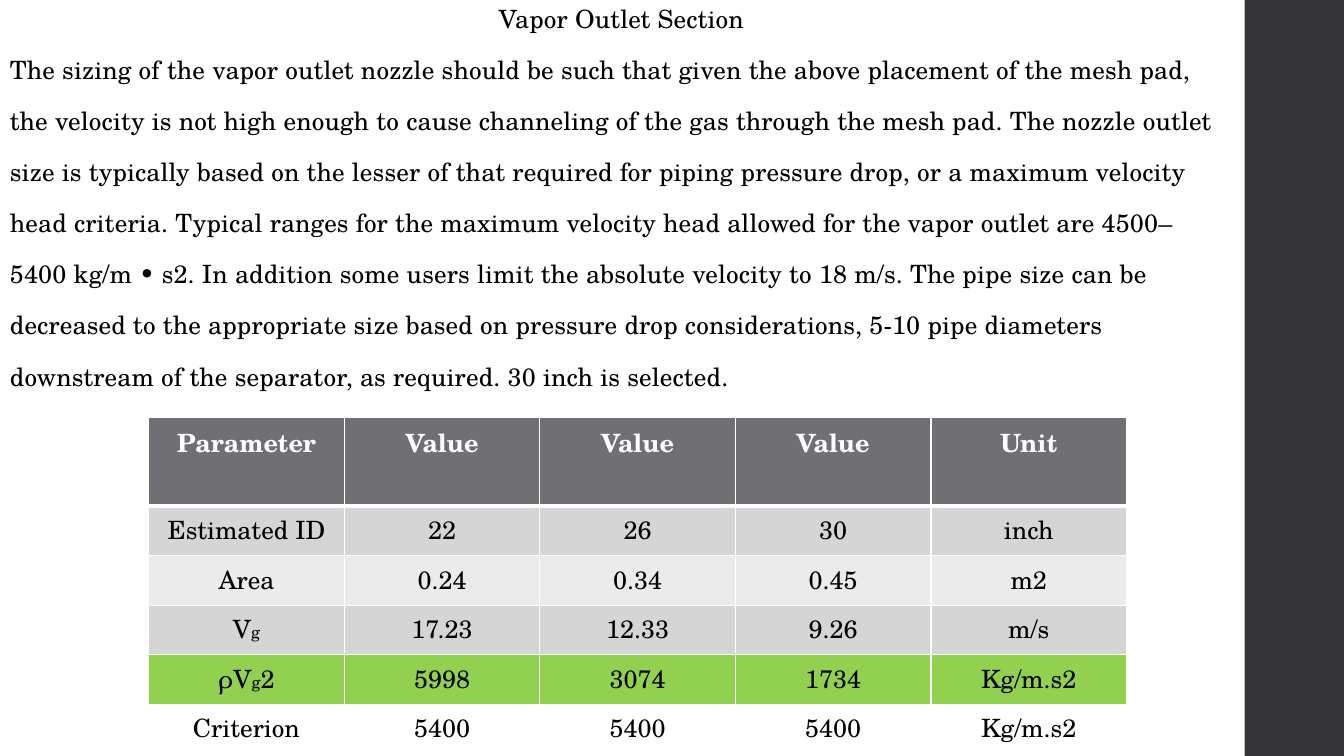
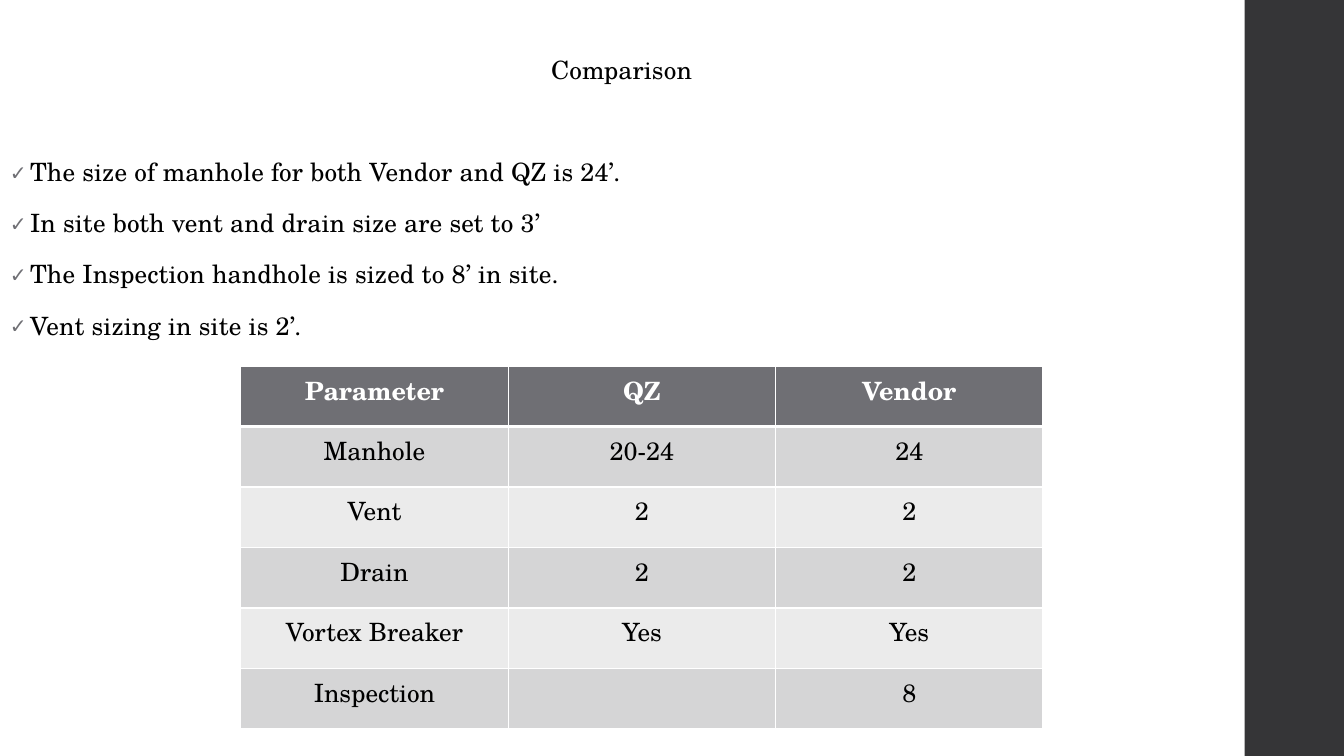
from lxml import etree
from pptx import Presentation
from pptx import util as u
from pptx.dml.color import RGBColor
from pptx.enum import shapes, text
from pptx.oxml import ns

Pt = u.Pt
FONT = "TeX Gyre Schola"
BLACK = RGBColor(0x00, 0x00, 0x00)
WHITE = RGBColor(0xFF, 0xFF, 0xFF)
BAND = RGBColor(0x35, 0x35, 0x37)
HEADER = RGBColor(0x6F, 0x6F, 0x74)
DARK_ROW = RGBColor(0xD5, 0xD5, 0xD6)
LIGHT_ROW = RGBColor(0xEB, 0xEB, 0xEB)
GREEN = RGBColor(0x92, 0xD0, 0x50)

TEXT_WIDTH = 888
LINE_PITCH = 36.6  # one text line with the space around it
CENTER = text.PP_ALIGN.CENTER

SLIDES = [
    {
        "title": "Vapor Outlet Section",
        "title_line": 0,
        "body_line": 1,
        "bullet": None,
        "body": [
            "The sizing of the vapor outlet nozzle should be such that given the above placement of the mesh pad,",
            "the velocity is not high enough to cause channeling of the gas through the mesh pad. The nozzle outlet",
            "size is typically based on the lesser of that required for piping pressure drop, or a maximum velocity",
            "head criteria. Typical ranges for the maximum velocity head allowed for the vapor outlet are 4500–",
            "5400 kg/m • s2. In addition some users limit the absolute velocity to 18 m/s. The pipe size can be",
            "decreased to the appropriate size based on pressure drop considerations, 5-10 pipe diameters",
            "downstream of the separator, as required. 30 inch is selected.",
        ],
        "table_at": (106.2, 298.5),
        "column_width": 139.7,
        "header_height": 63,
        "row_height": 35.4,
        "row_fills": {4: GREEN, 5: WHITE},
        # Text between underscores is set small
        "rows": [
            ["Parameter", "Value", "Value", "Value", "Unit"],
            ["Estimated ID", "22", "26", "30", "inch"],
            ["Area", "0.24", "0.34", "0.45", "m2"],
            ["V_g", "17.23", "12.33", "9.26", "m/s"],
            ["ρV_g_2", "5998", "3074", "1734", "Kg/m.s2"],
            ["Criterion", "5400", "5400", "5400", "Kg/m.s2"],
        ],
    },
    {
        "title": "Comparison",
        "title_line": 1,
        "body_line": 3,
        "bullet": "✓",
        "body": [
            "The size of manhole for both Vendor and QZ is 24’.",
            "In site both vent and drain size are set to 3’",
            "The Inspection handhole is sized to 8’ in site.",
            "Vent sizing in site is 2’.",
        ],
        "table_at": (172, 261.5),
        "column_width": 191,
        "header_height": 43.2,
        "row_height": 43.2,
        "row_fills": {},
        "rows": [
            ["Parameter", "QZ", "Vendor"],
            ["Manhole", "20-24", "24"],
            ["Vent", "2", "2"],
            ["Drain", "2", "2"],
            ["Vortex Breaker", "Yes", "Yes"],
            ["Inspection", "", "8"],
        ],
    },
]


def write(para, words, color=BLACK, bold=False, align=None, spacing=None, bullet=None):
    para.alignment = align
    for number, part in enumerate(words.split("_") if words else []):
        span = para.add_run()
        span.text = part
        span.font.name = FONT
        span.font.size = Pt(12 if number % 2 else 18)
        span.font.bold = bold
        span.font.color.rgb = color
        if spacing:
            span._r.get_or_add_rPr().set("spc", str(spacing))
    if spacing:
        para.line_spacing = 0.95
        para.space_before = Pt(14)
        para.space_after = Pt(2)
    if bullet:
        props = para._p.get_or_add_pPr()
        props.set("marL", str(Pt(14.4)))
        props.set("indent", str(-Pt(14.4)))
        bullet_color = etree.SubElement(props, ns.qn("a:buClr"))
        etree.SubElement(bullet_color, ns.qn("a:srgbClr"), val=str(HEADER))
        etree.SubElement(props, ns.qn("a:buSzPct"), val="80000")
        etree.SubElement(props, ns.qn("a:buFont"), typeface=FONT)
        etree.SubElement(props, ns.qn("a:buChar"), char=bullet)


def add_borders(cell, **widths):
    props = cell._tc.get_or_add_tcPr()
    for side in "LRTB":
        line = etree.SubElement(props, ns.qn("a:ln" + side), w=str(Pt(widths.get(side, 1))))
        fill = etree.SubElement(line, ns.qn("a:solidFill"))
        etree.SubElement(fill, ns.qn("a:srgbClr"), val=str(WHITE))


deck = Presentation()
deck.slide_width, deck.slide_height = Pt(960), Pt(540)
layout = deck.slide_layouts.get_by_name("Title Only")
pages = [deck.slides.add_slide(layout) for _ in SLIDES]

# Side band, shared through the layout
band = pages[0].shapes.add_shape(
    shapes.MSO_SHAPE.RECTANGLE, Pt(889), Pt(0), Pt(71), Pt(540))
band.shadow.inherit = False
band.fill.solid()
band.fill.fore_color.rgb = BAND
band.line.fill.background()
layout.shapes._spTree.append(band._element)

for page, content in zip(pages, SLIDES):
    # Title and body text, on a common line grid
    title = page.shapes.title
    title.left, title.top = Pt(0), Pt(content["title_line"] * LINE_PITCH)
    title.width, title.height = Pt(TEXT_WIDTH), Pt(LINE_PITCH)
    body = page.shapes.add_textbox(
        Pt(0), Pt(content["body_line"] * LINE_PITCH),
        Pt(TEXT_WIDTH), Pt(len(content["body"]) * LINE_PITCH))
    for box in (title, body):
        box.text_frame.word_wrap = True
        box.text_frame.auto_size = text.MSO_AUTO_SIZE.NONE
        box.text_frame.vertical_anchor = text.MSO_ANCHOR.TOP
    write(title.text_frame.paragraphs[0], content["title"], align=CENTER, spacing=10)
    for number, words in enumerate(content["body"]):
        frame = body.text_frame
        para = frame.add_paragraph() if number else frame.paragraphs[0]
        write(para, words, spacing=10, bullet=content["bullet"])

    # Table
    rows = content["rows"]
    left, top = content["table_at"]
    heights = [content["header_height"]] + [content["row_height"]] * (len(rows) - 1)
    table = page.shapes.add_table(
        len(rows), len(rows[0]), Pt(left), Pt(top),
        Pt(content["column_width"] * len(rows[0])), Pt(sum(heights))).table
    for column in table.columns:
        column.width = Pt(content["column_width"])
    for r, row in enumerate(rows):
        table.rows[r].height = Pt(heights[r])
        stripe = DARK_ROW if r % 2 else LIGHT_ROW
        row_fill = content["row_fills"].get(r, stripe) if r else HEADER
        for c, words in enumerate(row):
            cell = table.cell(r, c)
            add_borders(cell, B=1 if r else 3, T=3 if r == 1 else 1)
            cell.fill.solid()
            cell.fill.fore_color.rgb = row_fill
            cell.margin_top = Pt(3.6)
            write(cell.text_frame.paragraphs[0], words, align=CENTER,
                  color=BLACK if r else WHITE, bold=r == 0)

deck.save("out.pptx")
